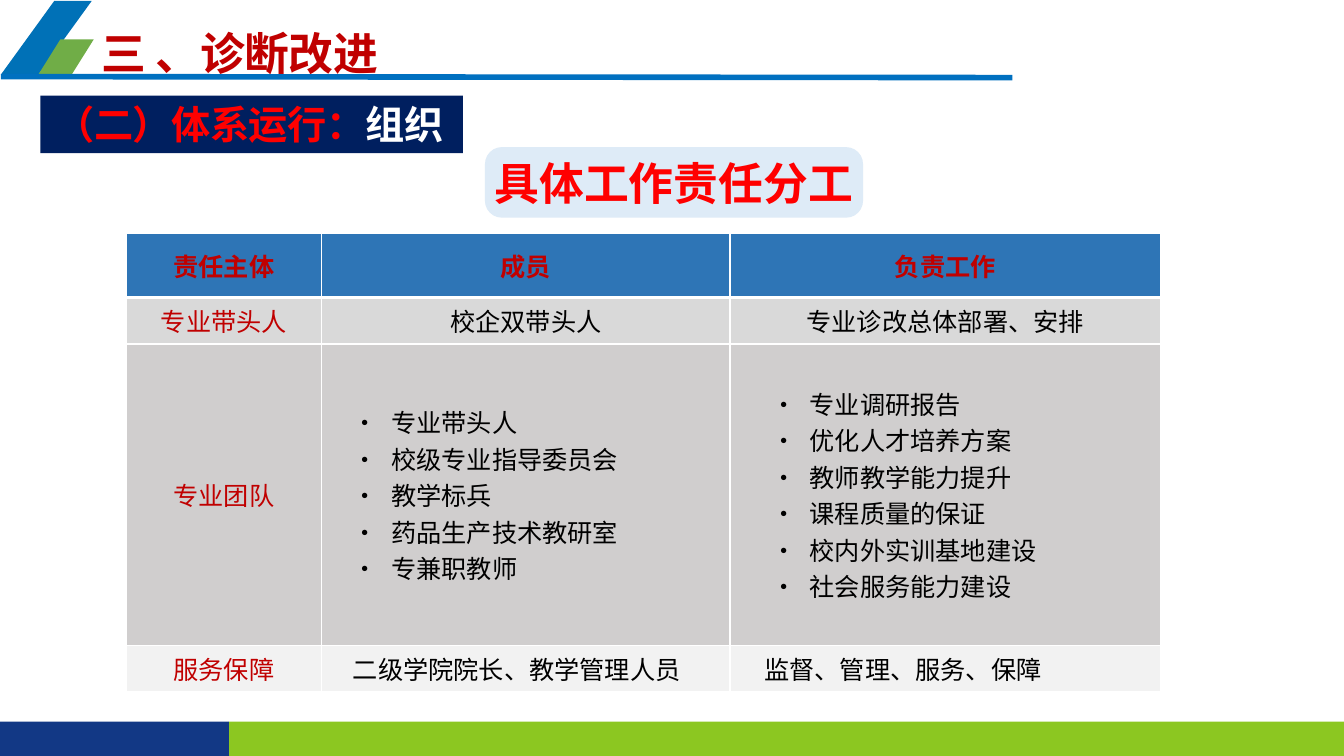
from lxml import etree
from pptx import Presentation
from pptx import util as u
from pptx.dml.color import RGBColor
from pptx.enum import shapes, text
from pptx.oxml import ns

FONT = "Noto Sans CJK SC"
WIDTH, HEIGHT = 13.33, 7.5
COLORS = {
    "ribbon": "0071B7", "leaf": "70AD47", "rule": "0070C0", "lime": "8CC721",
    "royal": "123885", "navy": "001F5F", "sky": "DEEBF7", "header": "2E75B6",
    "silver": "D9D9D9", "grey": "D0CECE", "pale": "F2F2F2", "crimson": "C00000",
    "red": "FF0000", "white": "FFFFFF", "black": "000000",
}
COLUMNS = [1.94, 4.05, 4.27]
ROWS = [0.63, 0.46, 2.99, 0.46]
ROW_FILLS = ["header", "silver", "grey", "pale"]
DUTIES = [
    ["责任主体", "成员", "负责工作"],
    ["专业带头人", "校企双带头人", "专业诊改总体部署、安排"],
    ["专业团队",
     ["专业带头人", "校级专业指导委员会", "教学标兵", "药品生产技术教研室", "专兼职教师"],
     ["专业调研报告", "优化人才培养方案", "教师教学能力提升", "课程质量的保证",
      "校内外实训基地建设", "社会服务能力建设"]],
    ["服务保障", "二级学院院长、教学管理人员", "监督、管理、服务、保障"],
]
INDENTS = {(2, 1): 0.21, (2, 2): 0.31, (3, 1): 0.21, (3, 2): 0.24}
BULLET_GAP = 0.38


def rgb(name):
    """Return the named colour."""
    return RGBColor.from_string(COLORS[name])


def add_run(paragraph, words, size, color, bold=True, spacing=0):
    """Append one formatted run, with letter spacing in points."""
    run = paragraph.add_run()
    run.text = words
    run.font.size, run.font.bold, run.font.name = u.Pt(size), bold, FONT
    run.font.color.rgb = rgb(color)
    properties = run._r.get_or_add_rPr()
    etree.SubElement(properties, ns.qn("a:ea")).set("typeface", FONT)
    if spacing:
        properties.set("spc", str(round(spacing * 100)))


def prepare_frame(frame, anchor):
    """Remove insets and fix the anchor of a text frame."""
    frame.margin_left = frame.margin_right = frame.margin_top = frame.margin_bottom = 0
    frame.word_wrap = True
    frame.auto_size = text.MSO_AUTO_SIZE.NONE
    frame.vertical_anchor = anchor
    return frame.paragraphs[0]


def add_block(slide, kind, box, color, adjustment=None):
    """Draw a plain filled preset shape."""
    block = slide.shapes.add_shape(kind, *map(u.Inches, box))
    block.shadow.inherit = False
    block.fill.solid()
    block.fill.fore_color.rgb = rgb(color)
    block.line.fill.background()
    if adjustment is not None:
        block.adjustments[0] = adjustment
    return block


def add_frame(slide, footer_top, footer_split):
    """Draw the corner emblem, the heading rule and the footer bands."""
    slant = shapes.MSO_SHAPE.PARALLELOGRAM
    band = shapes.MSO_SHAPE.RECTANGLE
    depth = HEIGHT - footer_top
    add_block(slide, slant, (0.01, 0.01, 0.9, 0.73), "ribbon", 0.724)
    add_block(slide, slant, (0.38, 0.39, 0.55, 0.35), "leaf", 0.626)
    add_block(slide, band, (footer_split, footer_top, WIDTH - footer_split, depth), "lime")
    add_block(slide, band, (0, footer_top, footer_split, depth), "royal")
    rule = slide.shapes.add_connector(
        shapes.MSO_CONNECTOR.STRAIGHT, *map(u.Inches, (0.01, 0.76, 10.04, 0.77)))
    rule.line.color.rgb = rgb("rule")
    rule.line.width = u.Pt(4)
    etree.SubElement(rule._element.spPr, ns.qn("a:effectLst"))


def add_heading(slide, box):
    """Place the chapter title in the title placeholder."""
    title = slide.shapes.title
    title.left, title.top, title.width, title.height = map(u.Inches, box)
    paragraph = prepare_frame(title.text_frame, text.MSO_ANCHOR.BOTTOM)
    paragraph.alignment = text.PP_ALIGN.LEFT
    add_run(paragraph, "三 、诊断改进", 32, "crimson", spacing=-0.4)


def add_section(slide, box):
    """Place the section label on its navy panel."""
    left, top, width, height = box
    add_block(slide, shapes.MSO_SHAPE.RECTANGLE, box, "navy")
    label = slide.shapes.add_textbox(
        *map(u.Inches, (left + 0.15, top + 0.07, width - 0.26, height - 0.09)))
    paragraph = prepare_frame(label.text_frame, text.MSO_ANCHOR.TOP)
    paragraph.line_spacing = u.Pt(31.8)
    add_run(paragraph, "（二）体系运行：", 28, "red", spacing=-0.3)
    add_run(paragraph, "组织", 28, "white", spacing=-0.3)


def add_caption(slide, box):
    """Place the rounded caption above the table."""
    caption = add_block(slide, shapes.MSO_SHAPE.ROUNDED_RECTANGLE, box, "sky", 0.24)
    paragraph = prepare_frame(caption.text_frame, text.MSO_ANCHOR.MIDDLE)
    paragraph.alignment = text.PP_ALIGN.CENTER
    add_run(paragraph, "具体工作责任分工", 32, "red")


def set_borders(cell, row):
    """Draw white cell borders, heavier below the header row."""
    heavy = {0: "lnB", 1: "lnT"}.get(row)
    for side in ("lnL", "lnR", "lnT", "lnB"):
        border = etree.SubElement(cell._tc.get_or_add_tcPr(), ns.qn("a:" + side))
        border.set("w", str(u.Pt(3 if side == heavy else 1)))
        fill = etree.SubElement(border, ns.qn("a:solidFill"))
        etree.SubElement(fill, ns.qn("a:srgbClr")).set("val", COLORS["white"])


def fill_cell(cell, row, column, content):
    """Write one cell as a single line or a bulleted list."""
    set_borders(cell, row)
    cell.fill.solid()
    cell.fill.fore_color.rgb = rgb(ROW_FILLS[row])
    cell.vertical_anchor = text.MSO_ANCHOR.MIDDLE
    bulleted = isinstance(content, list)
    indent = INDENTS.get((row, column))
    color = "crimson" if row == 0 or column == 0 else "black"
    for index, words in enumerate(content if bulleted else [content]):
        frame = cell.text_frame
        paragraph = frame.add_paragraph() if index else frame.paragraphs[0]
        paragraph.alignment = text.PP_ALIGN.LEFT if indent else text.PP_ALIGN.CENTER
        properties = paragraph._p.get_or_add_pPr()
        if indent:
            hanging = BULLET_GAP if bulleted else 0
            properties.set("marL", str(u.Inches(indent + hanging)))
            properties.set("indent", str(-u.Inches(hanging)))
        if bulleted:
            etree.SubElement(properties, ns.qn("a:buFont")).set("typeface", FONT)
            etree.SubElement(properties, ns.qn("a:buChar")).set("char", "·")
        add_run(paragraph, words, 18, color, bold=row == 0)


def add_duties(slide, left, top):
    """Build the table of responsibilities."""
    box = (left, top, sum(COLUMNS), sum(ROWS))
    duties = slide.shapes.add_table(
        len(ROWS), len(COLUMNS), *map(u.Inches, box)).table
    for column, width in zip(duties.columns, COLUMNS):
        column.width = u.Inches(width)
    for row, height in zip(duties.rows, ROWS):
        row.height = u.Inches(height)
    for row, contents in enumerate(DUTIES):
        for column, content in enumerate(contents):
            fill_cell(duties.cell(row, column), row, column, content)


def main():
    """Assemble and save the slide."""
    deck = Presentation()
    deck.slide_width, deck.slide_height = u.Inches(WIDTH), u.Inches(HEIGHT)
    slide = deck.slides.add_slide(deck.slide_layouts[5])
    add_frame(slide, 7.16, 2.27)
    add_duties(slide, 1.25, 2.32)
    add_caption(slide, (4.81, 1.46, 3.75, 0.7))
    add_heading(slide, (1.01, 0.14, 3.2, 0.65))
    add_section(slide, (0.4, 0.95, 4.19, 0.57))
    deck.save("out.pptx")


if __name__ == "__main__":
    main()
